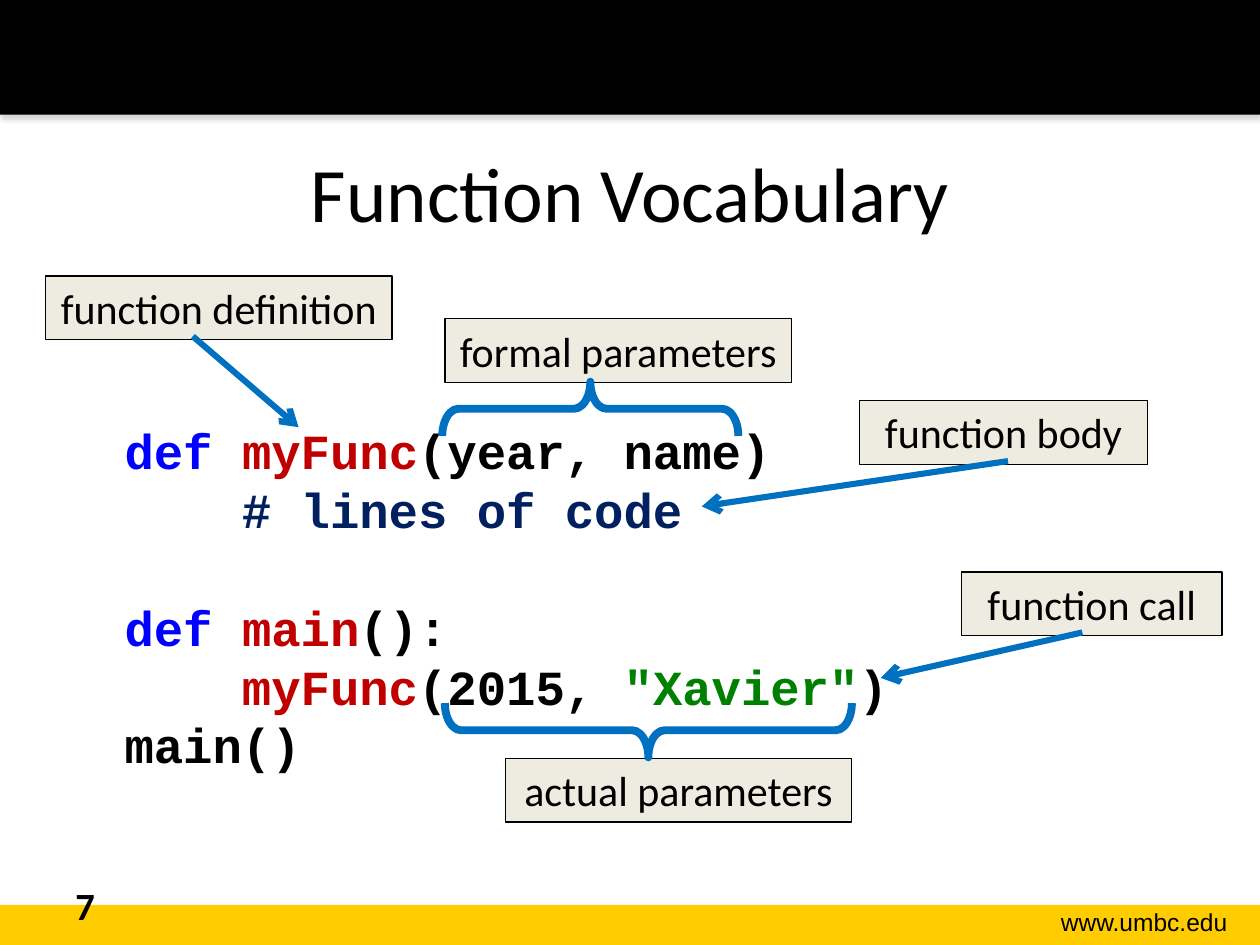
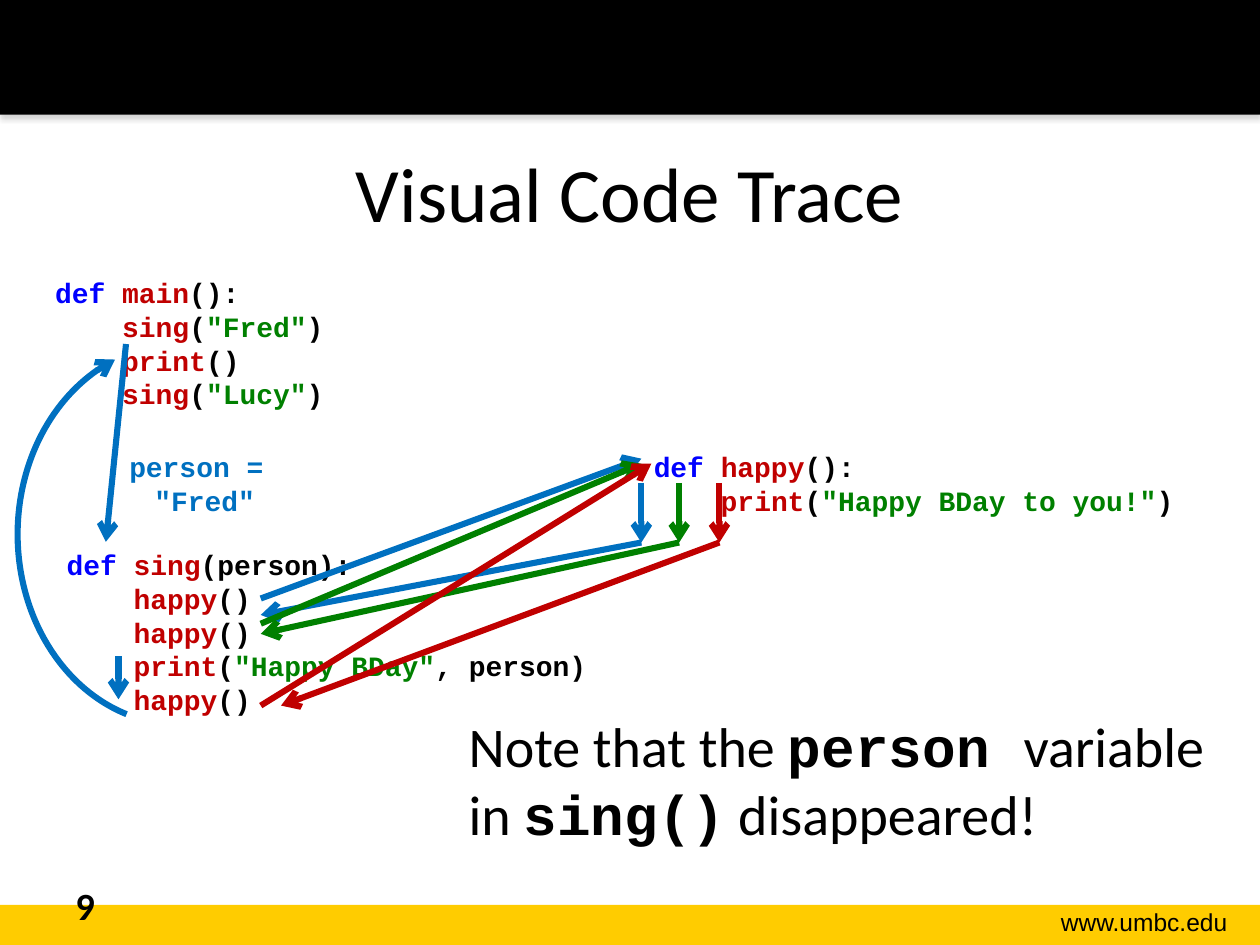
"""Builds two slides on function vocabulary and tracing code."""
from lxml import etree
from pptx import Presentation
from pptx.dml.color import RGBColor
from pptx.enum.shapes import MSO_CONNECTOR, MSO_SHAPE
from pptx.enum.text import MSO_ANCHOR, PP_ALIGN
from pptx.oxml import parse_xml
from pptx.oxml.ns import nsdecls, qn
from pptx.util import Pt

RECTANGLE, BRACE, ARC = MSO_SHAPE.RECTANGLE, MSO_SHAPE.LEFT_BRACE, MSO_SHAPE.ARC
STRAIGHT = MSO_CONNECTOR.STRAIGHT
LEFT, CENTER, RIGHT = PP_ALIGN.LEFT, PP_ALIGN.CENTER, PP_ALIGN.RIGHT
MIDDLE, TOP = MSO_ANCHOR.MIDDLE, MSO_ANCHOR.TOP

BLACK = RGBColor(0x00, 0x00, 0x00)
GOLD = RGBColor(0xFF, 0xCC, 0x00)
CREAM = RGBColor(0xEE, 0xEC, 0xE1)
BLUE = RGBColor(0x00, 0x70, 0xC0)
KEYWORD = RGBColor(0x00, 0x00, 0xFF)
RED = RGBColor(0xC0, 0x00, 0x00)
GREEN = RGBColor(0x00, 0x80, 0x00)
NAVY = RGBColor(0x00, 0x20, 0x60)

SANS, MONO, FOOTER_FONT = "Calibri", "Courier New", "Arial"
WIDTH, HEIGHT = 720, 540
INDENT = "    "
SITE = "www.umbc.edu"

VOCABULARY_CODE = [
    [("def ", KEYWORD), ("myFunc", RED), ("(year, name)", BLACK)],
    [(INDENT + "# lines of code", NAVY)],
    [],
    [("def ", KEYWORD), ("main", RED), ("():", BLACK)],
    [(INDENT + "myFunc", RED), ("(2015, ", BLACK), ('"Xavier"', GREEN), (")", BLACK)],
    [("main()", BLACK)],
]
TERMS = [
    ("function definition", 26, 157.7, 198),
    ("formal parameters", 254.2, 182.2, 198),
    ("actual parameters", 288.7, 433.4, 198),
    ("function body", 491, 229, 164.9),
    ("function call", 549.4, 326.9, 149),
]
TERM_ARROWS = [
    ((110.2, 192.2), (170.6, 244.1)),
    ((576, 263.5), (401, 289.4)),
    ((618.5, 361.4), (503.3, 387.4)),
]
PARAMETER_BRACES = [
    ((321.8, 149, 31, 169.2), 90),
    ((355, 301, 31, 232.6), 270),
]

MAIN_CODE = [
    [("def ", KEYWORD), ("main", RED), ("():", BLACK)],
    [(INDENT + "sing", RED), ("(", BLACK), ('"Fred"', GREEN), (")", BLACK)],
    [(INDENT + "print", RED), ("()", BLACK)],
    [(INDENT + "sing", RED), ("(", BLACK), ('"Lucy"', GREEN), (")", BLACK)],
]
SING_CODE = [
    [("def ", KEYWORD), ("sing", RED), ("(person):", BLACK)],
    [(INDENT + "happy", RED), ("()", BLACK)],
    [(INDENT + "happy", RED), ("()", BLACK)],
    [(INDENT + "print", RED), ("(", BLACK), ('"Happy BDay"', GREEN), (", person)", BLACK)],
    [(INDENT + "happy", RED), ("()", BLACK)],
]
HAPPY_CODE = [
    [("def ", KEYWORD), ("happy", RED), ("():", BLACK)],
    [(INDENT + "print", RED), ("(", BLACK), ('"Happy BDay to you!"', GREEN), (")", BLACK)],
]
PERSON_VALUE = [[("person = ", BLUE)], [('"Fred"', BLUE)]]
TRACE_CODE = [
    (MAIN_CODE, (24.5, 154.1, 201.6, 85), LEFT),
    (SING_CODE, (31, 309.6, 319.7, 104.4), LEFT),
    (PERSON_VALUE, (64.1, 253.4, 105.8, 46), CENTER),
    (HAPPY_CODE, (366.5, 253.4, 317.5, 46), LEFT),
]
CALL_X, BODY_TOP, BODY_BOTTOM = 149, 276, 310
HAPPY_CALLS = [
    (BLUE, 342, (366.5, 262.1), 366.5, (149, 351.4)),
    (GREEN, 356.4, (366.5, 265), 388.1, (149, 362.2)),
    (RED, 403.2, (372.2, 265), 411.1, (160.6, 403.2)),
]
SING_STEPS = [
    ((72, 196.6), (60.5, 309.6)),
    ((67.7, 375.1), (67.7, 399.6)),
]
RETURN_ARC, RETURN_ANGLES = (10.1, 196.6, 184.3, 217.4), (106.2, 249.94)
NOTE = [("Note that the ", SANS), ("person ", MONO), ("variable in ", SANS),
        ("sing()", MONO), (" disappeared!", SANS)]


def place(shape, box):
    shape.left, shape.top, shape.width, shape.height = map(Pt, box)


def style(paragraph, font, size, align=LEFT, bold=False, color=BLACK):
    paragraph.alignment = align
    paragraph.font.name, paragraph.font.size = font, Pt(size)
    paragraph.font.bold = bold
    paragraph.font.color.rgb = color


def add_shape(slide, kind, box, fill=None, line=None, weight=0.75):
    shape = slide.shapes.add_shape(kind, *map(Pt, box))
    shape.shadow.inherit = False
    if fill is None:
        shape.fill.background()
    else:
        shape.fill.solid()
        shape.fill.fore_color.rgb = fill
    if line is None:
        shape.line.fill.background()
    else:
        shape.line.color.rgb, shape.line.width = line, Pt(weight)
    return shape


def add_text(slide, text, box, *look):
    frame = slide.shapes.add_textbox(*map(Pt, box)).text_frame
    frame.word_wrap = True
    frame.text = text
    style(frame.paragraphs[0], *look)


def add_code(slide, lines, box, size, align=LEFT):
    frame = slide.shapes.add_textbox(*map(Pt, box)).text_frame
    frame.word_wrap = True
    paragraph, gap = frame.paragraphs[0], 0
    for number, line in enumerate(lines):
        if not line:
            gap += 1.2 * size
            continue
        if number:
            paragraph = frame.add_paragraph()
        paragraph.space_before, gap = Pt(gap), 0
        style(paragraph, MONO, size, align, True)
        for text, color in line:
            run = paragraph.add_run()
            run.text = text
            run.font.color.rgb = color


def add_arrowhead(shape):
    etree.SubElement(shape.line._get_or_add_ln(), qn("a:tailEnd"), type="arrow")


def add_arrow(slide, start, end, color=BLUE):
    arrow = slide.shapes.add_connector(STRAIGHT, *map(Pt, start + end))
    arrow.line.color.rgb, arrow.line.width = color, Pt(3.5)
    add_arrowhead(arrow)
    etree.SubElement(arrow.element.spPr, qn("a:effectLst"))


def add_slide(deck, layout, title, number):
    slide = deck.slides.add_slide(deck.slide_layouts[layout])
    add_shape(slide, RECTANGLE, (0, 517, WIDTH, 23), GOLD)
    band = add_shape(slide, RECTANGLE, (0, 0, WIDTH, 65.5), BLACK)
    band.element.spPr.find(qn("a:effectLst")).append(parse_xml(
        f'<a:outerShdw {nsdecls("a")} blurRad="{Pt(3.1)}" dist="{Pt(1.8)}" dir="5400000">'
        '<a:srgbClr val="808080"><a:alpha val="35000"/></a:srgbClr></a:outerShdw>'))
    add_text(slide, SITE, (565.2, 514.8, 143.3, 24.5), FOOTER_FONT, 14, RIGHT)
    add_text(slide, number, (36, 500.4, 167.8, 28.8), SANS, 22, LEFT, True)
    heading = slide.shapes.title
    place(heading, (36, 64.8, 648, 90))
    heading.text_frame.text = title
    heading.text_frame.vertical_anchor = MIDDLE
    style(heading.text_frame.paragraphs[0], SANS, 44, CENTER)
    return slide


def build_vocabulary(deck):
    slide = add_slide(deck, 5, "Function Vocabulary", "7")
    add_code(slide, VOCABULARY_CODE, (64.1, 236.9, 591.1, 211), 28)
    for term, left, top, width in TERMS:
        label = add_shape(slide, RECTANGLE, (left, top, width, 36.35), CREAM, BLACK)
        label.text_frame.text = term
        label.text_frame.vertical_anchor = TOP
        style(label.text_frame.paragraphs[0], SANS, 24, CENTER)
    for start, end in TERM_ARROWS:
        add_arrow(slide, start, end)
    for box, rotation in PARAMETER_BRACES:
        brace = add_shape(slide, BRACE, box, line=BLUE, weight=4.5)
        brace.rotation = rotation
        brace.adjustments[0] = 0.3


def build_trace(deck):
    slide = add_slide(deck, 1, "Visual Code Trace", "9")
    for lines, box, align in TRACE_CODE:
        add_code(slide, lines, box, 16, align)
    for color, call_y, entry, body_x, back in HAPPY_CALLS:
        body_end = (body_x, BODY_BOTTOM)
        add_arrow(slide, (CALL_X, call_y), entry, color)
        add_arrow(slide, (body_x, BODY_TOP), body_end, color)
        add_arrow(slide, body_end, back, color)
    for start, end in SING_STEPS:
        add_arrow(slide, start, end)
    arc = add_shape(slide, ARC, RETURN_ARC, line=BLUE, weight=3.5)
    for index, degrees in enumerate(RETURN_ANGLES):
        arc.adjustments[index] = degrees * 0.6
    add_arrowhead(arc)

    note = slide.placeholders[1]
    place(note, (260.6, 403.2, 440.6, 110.9))
    paragraph = note.text_frame.paragraphs[0]
    properties = paragraph._p.get_or_add_pPr()
    properties.set("marL", "0")
    properties.set("indent", "0")
    etree.SubElement(properties, qn("a:buNone"))
    paragraph.space_before = Pt(0)
    style(paragraph, SANS, 32)
    for text, font in NOTE:
        run = paragraph.add_run()
        run.text = text
        run.font.name, run.font.bold = font, font == MONO


def main():
    deck = Presentation()
    deck.slide_width, deck.slide_height = Pt(WIDTH), Pt(HEIGHT)
    build_vocabulary(deck)
    build_trace(deck)
    deck.save("out.pptx")


if __name__ == "__main__":
    main()
